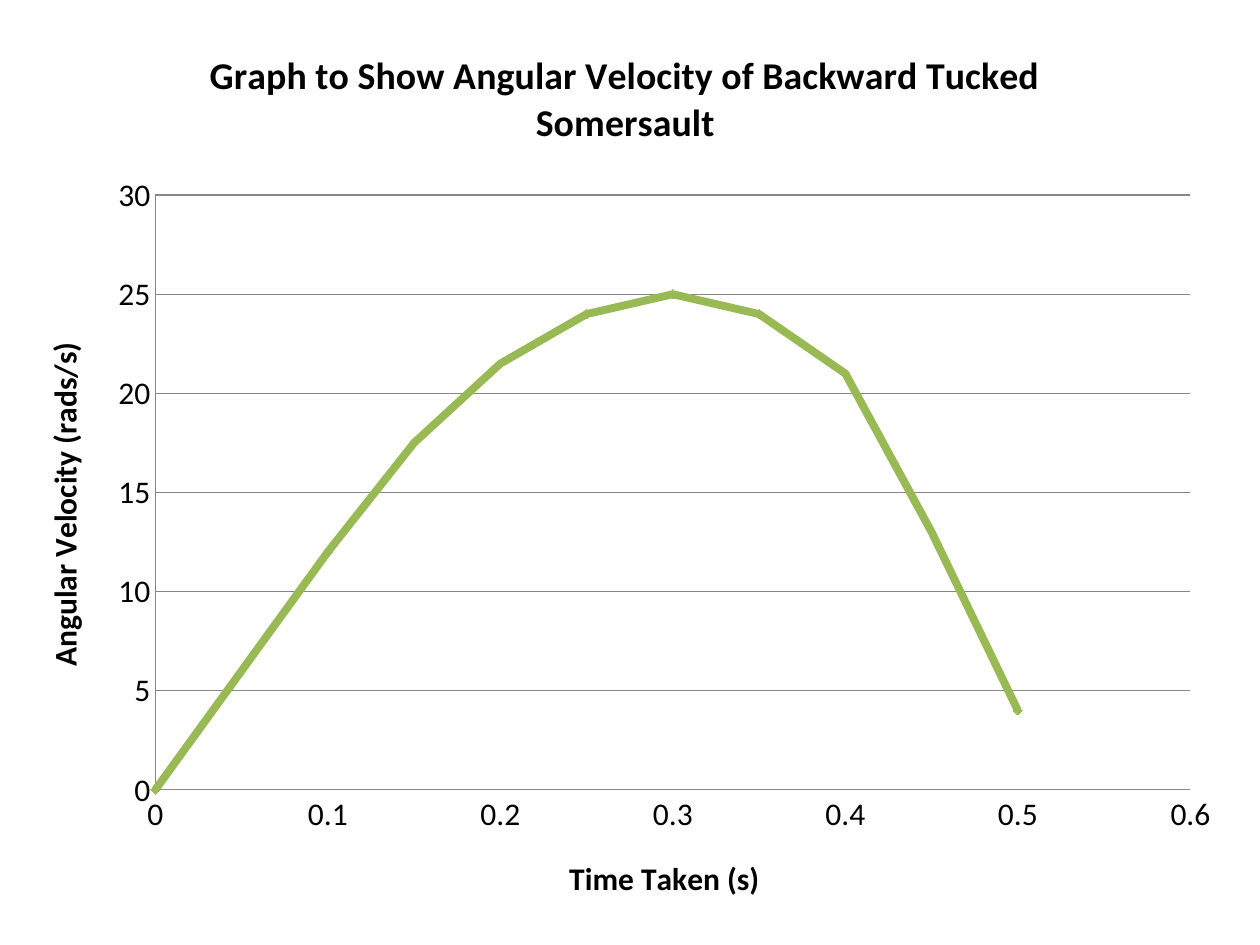
from lxml import etree
from pptx import Presentation
from pptx.chart.data import XyChartData
from pptx.dml.color import RGBColor
from pptx.enum.chart import XL_CHART_TYPE, XL_MARKER_STYLE, XL_TICK_MARK
from pptx.oxml.ns import qn
from pptx.util import Cm, Pt

SMOOTH = XL_CHART_TYPE.XY_SCATTER_SMOOTH
DIAMOND = XL_MARKER_STYLE.DIAMOND
NO_TICK = XL_TICK_MARK.NONE
BLACK, GREEN, GRAY = "000000", "98B954", "868686"


def paint(target, color):
    target.solid()
    target.fore_color.rgb = RGBColor.from_string(color)


def label(owner, text, size):
    frame = owner.text_frame
    frame.text = text
    font = frame.paragraphs[0].font
    font.name, font.size, font.bold = "Calibri", Pt(size), True
    paint(font.fill, BLACK)


deck = Presentation()
deck.slide_width, deck.slide_height = Cm(25.4), Cm(19.05)
slide = deck.slides.add_slide(deck.slide_layouts[6])

# Velocity in steps of 0.05 s
speeds = [0, 6, 12, 17.5, 21.5, 24, 25, 24, 21, 13, 4]
data = XyChartData()
points = data.add_series("Series 1")
for step, speed in enumerate(speeds):
    points.add_data_point(round(step * 0.05, 2), speed)

# Chart and title
chart = slide.shapes.add_chart(
    SMOOTH, Cm(0.3), Cm(0.33), Cm(24.61), Cm(18.39), data).chart
chart.has_legend = False
chart.font.name, chart.font.size = "Calibri", Pt(18)
paint(chart.font.fill, BLACK)
chart.has_title = True
label(chart.chart_title, "Graph to Show Angular Velocity of Backward Tucked Somersault", 21.6)
chart.chart_title.include_in_layout = False

# Axes
axes = [
    (chart.category_axis, "Time Taken (s)", 0.6, 0.1, "General"),
    (chart.value_axis, "Angular Velocity (rads/s)", 30, 5, "General"),
]
for axis, name, top, unit, form in axes:
    axis.minimum_scale, axis.maximum_scale, axis.major_unit = 0, top, unit
    axis.major_tick_mark = axis.minor_tick_mark = NO_TICK
    axis.tick_labels.number_format = form
    axis.tick_labels.number_format_is_linked = False
    axis.has_major_gridlines = axis is chart.value_axis
    paint(axis.format.line.fill, GRAY)
    axis.format.line.width = Pt(0.75)
    label(axis.axis_title, name, 18)
grid = chart.value_axis.major_gridlines.format.line
paint(grid.fill, GRAY)
grid.width = Pt(0.75)

# Curve
plot = chart.plots[0]
plot.vary_by_categories = False
curve = plot.series[0]
curve.smooth = True
paint(curve.format.line.fill, GREEN)
curve.format.line.width = Pt(4.5)
curve.marker.style, curve.marker.size = DIAMOND, 5
paint(curve.marker.format.fill, GREEN)
paint(curve.marker.format.line.fill, GREEN)

# Place of the plot area, as shares of the chart
area = chart.element.find(".//" + qn("c:plotArea"))
layout = area.find(qn("c:layout"))
if layout is None:
    layout = etree.Element(qn("c:layout"))
    area.insert(0, layout)
manual = etree.SubElement(layout, qn("c:manualLayout"))
parts = [("layoutTarget", "inner"), ("xMode", "edge"), ("yMode", "edge"),
         ("x", "0.115"), ("y", "0.196"), ("w", "0.848"), ("h", "0.652")]
for tag, value in parts:
    etree.SubElement(manual, qn("c:" + tag)).set("val", value)

deck.save("out.pptx")
